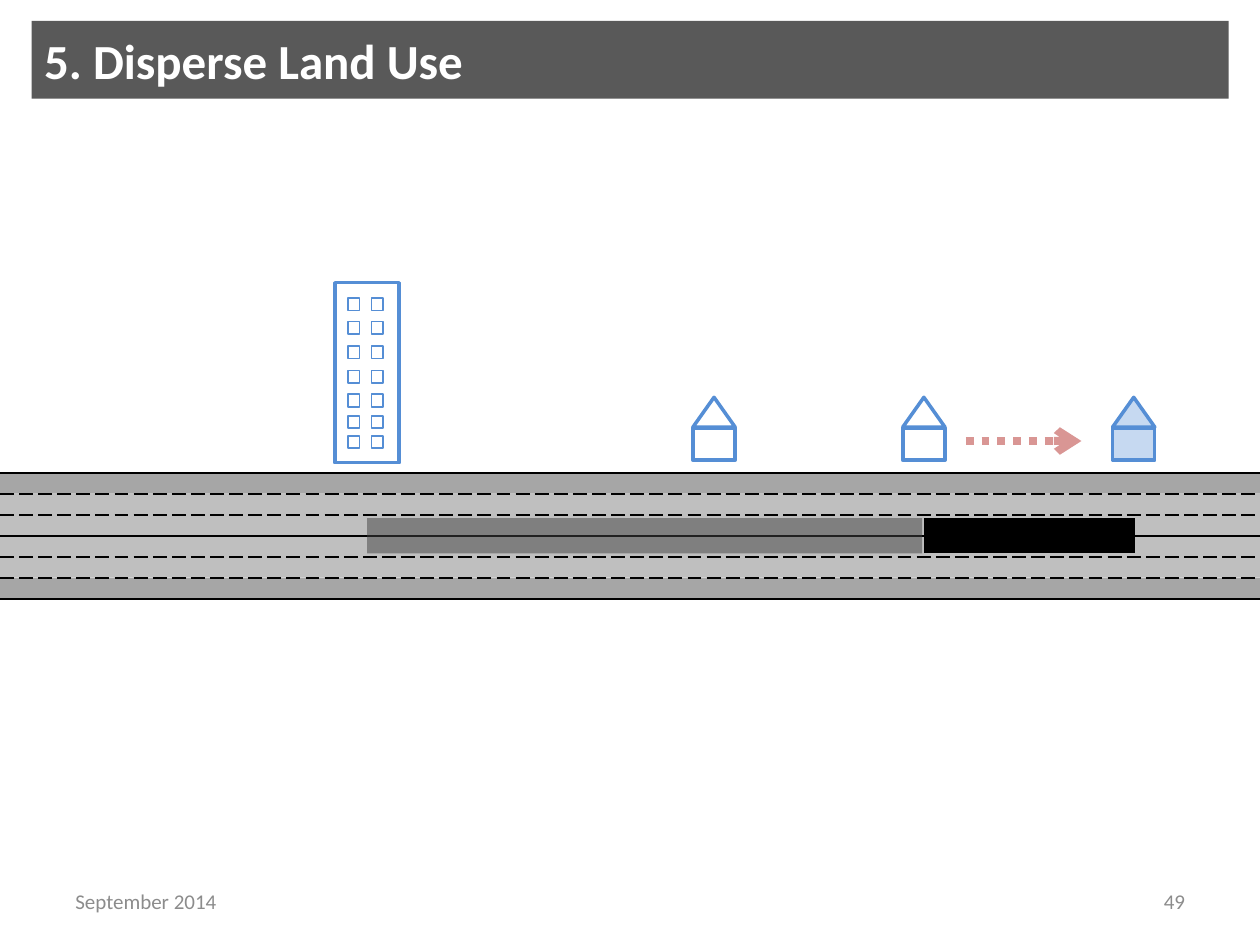
from lxml.etree import SubElement
from pptx import Presentation
from pptx.dml.color import RGBColor
from pptx.enum.dml import MSO_LINE
from pptx.enum.shapes import MSO_CONNECTOR, MSO_SHAPE
from pptx.enum.text import MSO_ANCHOR, PP_ALIGN
from pptx.oxml.ns import qn
from pptx.util import Cm, Pt

THEME = {
    "font": "Calibri", "title_size": 28, "footer_size": 12,
    "title_fill": "595959", "title_text": "FFFFFF", "footer_text": "8C8C8C",
    "outline": "558ED5", "new_house": "C6D9F1", "move": "D99694",
    "shoulder": "A6A6A6", "lane": "BFBFBF", "marking": "000000",
    "trip": "404040", "extra_trip": "000000",
}
PAGE_WIDTH, PAGE_HEIGHT = 25.4, 19.05

# Content; all lengths are in centimetres
TITLE = ("5. Disperse Land Use", (0.64, 0.42, 24.13, 1.57))
FOOTERS = [
    ("September 2014", 1.27, PP_ALIGN.LEFT),
    ("49", 18.21, PP_ALIGN.RIGHT),
]
HOUSES = [(13.97, None), (18.2, None), (22.43, THEME["new_house"])]  # left, fill
TOWER = (6.75, 5.7, 1.3, 3.63)
WINDOW_LEFTS = [7.01, 7.49]
WINDOW_TOPS = [6.01, 6.48, 6.98, 7.47, 7.95, 8.38, 8.79]
ROAD_TOP, ROAD_BOTTOM = 9.53, 12.07
LANES = 6
SOLID_MARKINGS = {0, LANES // 2, LANES}
TRIPS = [  # start, end, colour, opacity in percent
    (18.63, 22.88, THEME["extra_trip"], 100),
    (7.4, 18.59, THEME["trip"], 50),
]


def colour(value):
    return RGBColor.from_string(value)


def add_block(parent, frame, fill=None, line=None, width=2, kind=MSO_SHAPE.RECTANGLE):
    block = parent.add_shape(kind, *map(Cm, frame))
    block.shadow.inherit = False
    if fill:
        block.fill.solid()
        block.fill.fore_color.rgb = colour(fill)
    else:
        block.fill.background()
    if line:
        block.line.color.rgb = colour(line)
        block.line.width = Pt(width)
    else:
        block.line.fill.background()
    return block


def add_rule(parent, left, right, y, line, width=1, dash=None, opacity=100, arrow=False):
    """Draw a horizontal line, optionally dashed, see-through or arrowed."""
    rule = parent.add_connector(MSO_CONNECTOR.STRAIGHT, Cm(left), Cm(y), Cm(right), Cm(y))
    rule.line.color.rgb = colour(line)
    rule.line.width = Pt(width)
    if dash:
        rule.line.dash_style = dash
    properties = rule.element.spPr
    SubElement(properties, qn("a:effectLst"))
    if opacity < 100:
        tint = properties.find(".//" + qn("a:srgbClr"))
        SubElement(tint, qn("a:alpha"), val=str(opacity * 1000))
    if arrow:
        SubElement(properties.find(qn("a:ln")), qn("a:tailEnd"), type="arrow")


def write(box, text, align, **font_format):
    frame = box.text_frame
    frame.word_wrap = True
    frame.vertical_anchor = MSO_ANCHOR.MIDDLE
    para = frame.paragraphs[0]
    para.alignment = align
    span = para.add_run()
    span.text = text
    span.font.name = THEME["font"]
    span.font.color.rgb = colour(font_format.pop("color"))
    for name, value in font_format.items():
        setattr(span.font, name, value)


def add_house(page, left, fill):
    house = page.shapes.add_group_shape().shapes
    add_block(house, (left, 8.63, 0.85, 0.65), fill, THEME["outline"])
    add_block(house, (left, 8.01, 0.85, 0.6), fill, THEME["outline"],
              kind=MSO_SHAPE.ISOSCELES_TRIANGLE)


def add_tower(page):
    tower = page.shapes.add_group_shape().shapes
    add_block(tower, TOWER, line=THEME["outline"])
    for top in WINDOW_TOPS:
        for left in WINDOW_LEFTS:
            add_block(tower, (left, top, 0.24, 0.25), line=THEME["outline"], width=1)


def add_road(page):
    step = (ROAD_BOTTOM - ROAD_TOP) / LANES
    for lane, span, fill in [(0, 1, "shoulder"), (LANES - 1, 1, "shoulder"),
                             (1, LANES - 2, "lane")]:
        add_block(page.shapes, (0, ROAD_TOP + lane * step, PAGE_WIDTH, span * step),
                  THEME[fill])
    for number in range(LANES + 1):
        dash = None if number in SOLID_MARKINGS else MSO_LINE.LONG_DASH
        add_rule(page.shapes, 0, PAGE_WIDTH, ROAD_TOP + number * step,
                 THEME["marking"], dash=dash)
    middle = (ROAD_TOP + ROAD_BOTTOM) / 2
    for start, end, line, opacity in TRIPS:
        add_rule(page.shapes, start, end, middle, line, 20.25, opacity=opacity)


def main():
    deck = Presentation()
    deck.slide_width, deck.slide_height = Cm(PAGE_WIDTH), Cm(PAGE_HEIGHT)
    page = deck.slides.add_slide(deck.slide_layouts[6])

    text, frame = TITLE
    banner = add_block(page.shapes, frame, THEME["title_fill"])
    write(banner, text, PP_ALIGN.LEFT, size=Pt(THEME["title_size"]), bold=True,
          color=THEME["title_text"])

    add_tower(page)
    for left, fill in HOUSES:
        add_house(page, left, fill)
    add_rule(page.shapes, 19.47, 21.8, 8.89, THEME["move"], 4.5,
             MSO_LINE.ROUND_DOT, arrow=True)
    add_road(page)

    for text, left, align in FOOTERS:
        box = page.shapes.add_textbox(Cm(left), Cm(17.66), Cm(5.93), Cm(1.01))
        write(box, text, align, size=Pt(THEME["footer_size"]), color=THEME["footer_text"])

    deck.save("out.pptx")


if __name__ == "__main__":
    main()
